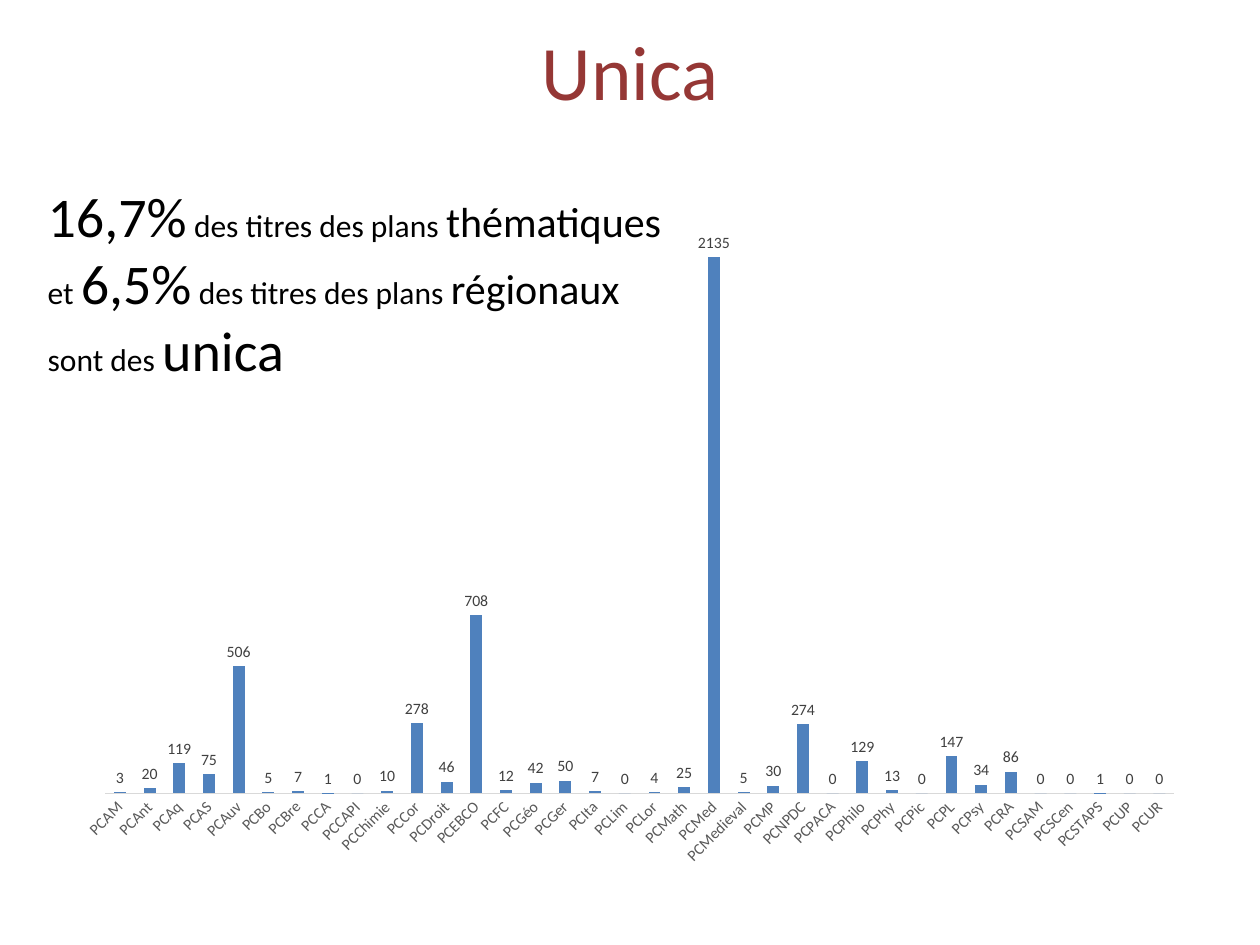
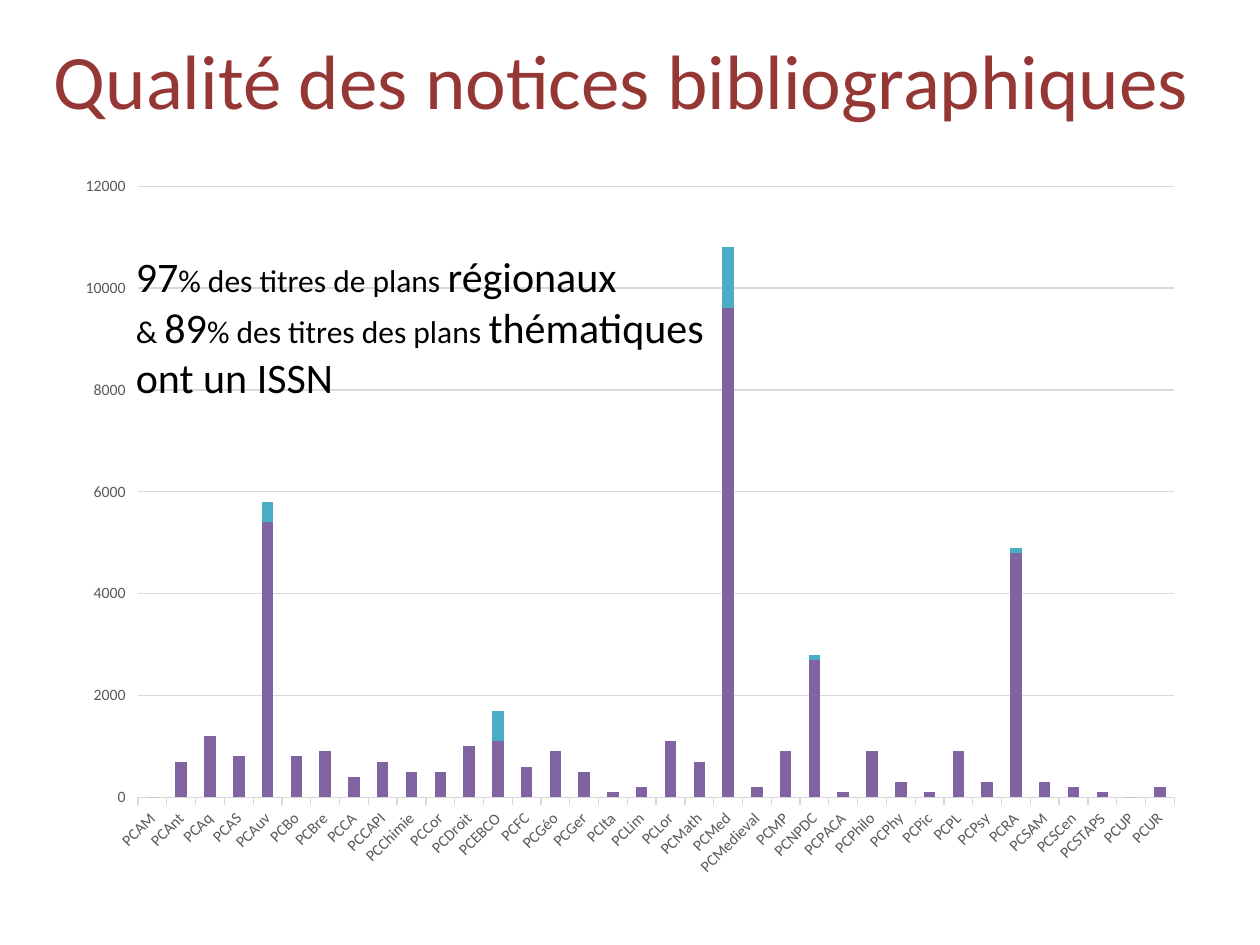
from pptx import Presentation
from pptx.chart.data import CategoryChartData
from pptx.dml.color import RGBColor
from pptx.enum.chart import XL_CHART_TYPE, XL_LABEL_POSITION, XL_TICK_MARK
from pptx.enum.text import MSO_ANCHOR, MSO_AUTO_SIZE, PP_ALIGN
from pptx.util import Inches, Pt

FONT = "Calibri"
RED = RGBColor(0x95, 0x37, 0x35)
BLACK = RGBColor(0, 0, 0)
DARK = RGBColor(0x40, 0x40, 0x40)
GREY = RGBColor(0x59, 0x59, 0x59)
PALE = RGBColor(0xD9, 0xD9, 0xD9)
BLUE = RGBColor(0x4F, 0x81, 0xBD)
PURPLE = RGBColor(0x80, 0x64, 0xA2)
TEAL = RGBColor(0x4B, 0xAC, 0xC6)

PLANS = (
    "PCAM PCAnt PCAq PCAS PCAuv PCBo PCBre PCCA PCCAPI PCChimie PCCor PCDroit "
    "PCEBCO PCFC PCGéo PCGer PCIta PCLim PCLor PCMath PCMed PCMedieval PCMP "
    "PCNPDC PCPACA PCPhilo PCPhy PCPic PCPL PCPsy PCRA PCSAM PCSCen PCSTAPS "
    "PCUP PCUR"
).split()
UNICA = [3, 20, 119, 75, 506, 5, 7, 1, 0, 10, 278, 46, 708, 12, 42, 50, 7, 0,
         4, 25, 2135, 5, 30, 274, 0, 129, 13, 0, 147, 34, 86, 0, 0, 1, 0, 0]
ISSN = [0, 700, 1200, 800, 5400, 800, 900, 400, 700, 500, 500, 1000,
        1100, 600, 900, 500, 100, 200, 1100, 700, 9600, 200, 900, 2700,
        100, 900, 300, 100, 900, 300, 4800, 300, 200, 100, 0, 200]
GAPS = {"PCAuv": 400, "PCEBCO": 600, "PCMed": 1200, "PCNPDC": 100, "PCRA": 100}
NO_ISSN = [GAPS.get(plan, 0) for plan in PLANS]


class Deck:
    """Hold the shared style and the current slide."""

    def __init__(self):
        self.prs = Presentation()
        self.prs.slide_width = Inches(10)
        self.prs.slide_height = Inches(7.5)
        self.slide = None

    def style(self, font, size, color):
        font.name = FONT
        font.size = Pt(size)
        font.color.rgb = color

    def add(self, text, left, top, width):
        self.slide = self.prs.slides.add_slide(self.prs.slide_layouts[5])
        title = self.slide.shapes.title
        title.left, title.top = Inches(left), Inches(top)
        title.width, title.height = Inches(width), Inches(1.25)
        frame = title.text_frame
        frame.vertical_anchor = MSO_ANCHOR.MIDDLE
        para = frame.paragraphs[0]
        para.alignment = PP_ALIGN.CENTER
        run = para.add_run()
        run.text = text
        self.style(run.font, 44, RED)

    def text(self, lines, left, top, width, height, wrap):
        box = self.slide.shapes.add_textbox(
            Inches(left), Inches(top), Inches(width), Inches(height))
        frame = box.text_frame
        frame.word_wrap = wrap
        frame.auto_size = MSO_AUTO_SIZE.SHAPE_TO_FIT_TEXT
        for i, line in enumerate(lines):
            para = frame.add_paragraph() if i else frame.paragraphs[0]
            for words, size in line:
                run = para.add_run()
                run.text = words
                self.style(run.font, size, BLACK)

    def chart(self, kind, top, series, overlap, peak):
        data = CategoryChartData()
        data.categories = PLANS
        for i, (vals, _) in enumerate(series, 1):
            data.add_series(f"Series {i}", vals)
        chart = self.slide.shapes.add_chart(
            kind, Inches(0.5), Inches(top), Inches(9), Inches(5.78), data).chart
        self.style(chart.font, 10, BLACK)
        chart.has_title = chart.has_legend = False
        plot = chart.plots[0]
        plot.gap_width, plot.overlap = 150, overlap
        plot.vary_by_categories = False
        for bars, (_, color) in zip(plot.series, series):
            bars.format.fill.solid()
            bars.format.fill.fore_color.rgb = color
            bars.invert_if_negative = False
        for axis in (chart.category_axis, chart.value_axis):
            self.style(axis.tick_labels.font, 9, GREY)
        self.line(chart.category_axis.format.line)
        for body in chart.element.xpath(".//c:catAx/c:txPr/a:bodyPr"):
            body.set("rot", "-2700000")
        chart.value_axis.minimum_scale = 0
        chart.value_axis.maximum_scale = peak
        return chart

    def line(self, line):
        line.color.rgb = PALE
        line.width = Pt(0.75)

    def label(self, chart):
        chart.category_axis.major_tick_mark = XL_TICK_MARK.NONE
        chart.value_axis.has_major_gridlines = False
        chart.value_axis.visible = False
        labels = chart.plots[0].series[0].data_labels
        labels.show_value = True
        labels.position = XL_LABEL_POSITION.OUTSIDE_END
        self.style(labels.font, 9, DARK)

    def grid(self, chart):
        axis = chart.value_axis
        axis.has_major_gridlines = True
        self.line(axis.major_gridlines.format.line)
        axis.format.line.fill.background()


def main():
    """Build both slides and save them."""
    deck = Deck()
    deck.add("Unica", 0.5, -0.07, 9)
    deck.label(deck.chart(
        XL_CHART_TYPE.COLUMN_CLUSTERED, 1.2, [(UNICA, BLUE)], -25, 2500))
    deck.text([
        [("16,7%", 32), (" des titres des plans ", 18), ("thématiques", 24)],
        [("et ", 18), ("6,5%", 32), (" des titres des plans ", 18),
         ("régionaux", 24)],
        [("sont des ", 18), ("unica", 32)],
    ], 0.28, 1.39, 5.2, 1.72, False)

    deck.add("Qualité des notices bibliographiques", 0.01, 0, 9.85)
    deck.grid(deck.chart(
        XL_CHART_TYPE.COLUMN_STACKED, 1.29,
        [(ISSN, PURPLE), (NO_ISSN, TEAL)], 100, 12000))
    deck.text([
        [("97", 24), ("% des titres de plans ", 18), ("régionaux", 24)],
        [("& ", 18), ("89", 24), ("% des titres des plans ", 18),
         ("thématiques", 24)],
        [("ont un ISSN", 24)],
    ], 0.98, 1.94, 8.04, 1.31, True)
    deck.prs.save("out.pptx")


if __name__ == "__main__":
    main()
